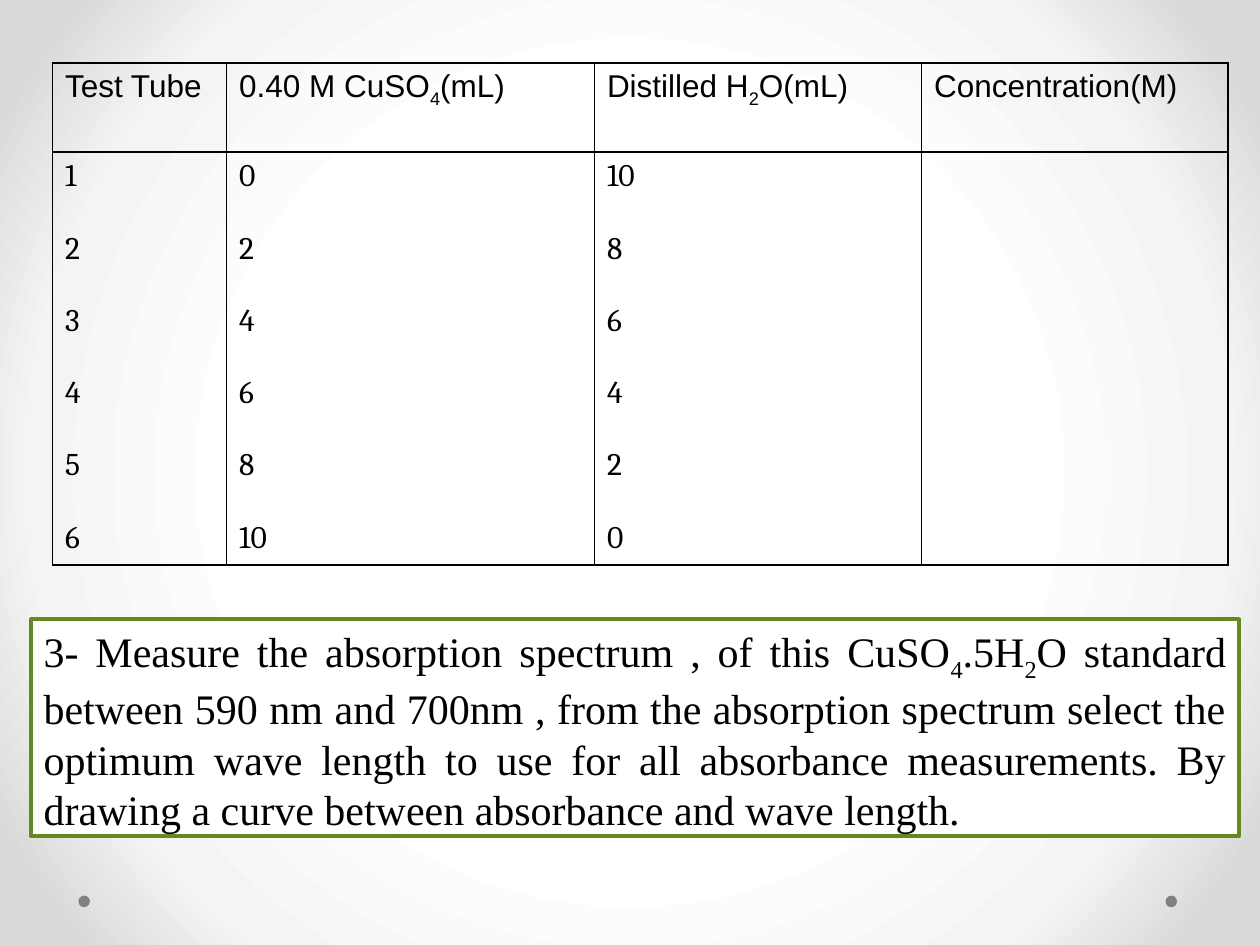
from lxml import etree
from pptx import Presentation
from pptx.dml.color import RGBColor
from pptx.enum.shapes import MSO_SHAPE
from pptx.enum.text import MSO_ANCHOR, PP_ALIGN
from pptx.oxml import parse_xml
from pptx.oxml.ns import nsdecls, qn
from pptx.util import Pt

RECTANGLE, OVAL = MSO_SHAPE.RECTANGLE, MSO_SHAPE.OVAL
JUSTIFY, LEFT = PP_ALIGN.JUSTIFY, PP_ALIGN.LEFT
TOP = MSO_ANCHOR.TOP
BLACK, WHITE, GREY, GREEN = "000000", "FFFFFF", "808080", "63891F"
BACKDROP = [(50, WHITE), (76, "F4F4F4"), (92, "DADADA")]
HEADINGS = [
    ["Test Tube"],
    ["0.40 M CuSO", "4", "(mL)"],
    ["Distilled H", "2", "O(mL)"],
    ["Concentration(M)"],
]
VOLUMES = range(0, 11, 2)
COLUMNS = [
    [[str(tube)] for tube in range(1, 7)],
    [[str(volume)] for volume in VOLUMES],
    [[str(10 - volume)] for volume in VOLUMES],
    [],
]
INSTRUCTION = [
    "3- Measure the absorption spectrum , of this CuSO", "4", ".5H", "2",
    "O standard between 590 nm and 700nm , from the absorption spectrum select "
    "the optimum wave length to use for all absorbance measurements. By drawing "
    "a curve between absorbance and wave length.",
]


def color(code):
    return RGBColor.from_string(code)


class SlideBuilder:
    """Hold the text style and the current slide, and add elements to it."""

    def __init__(self, page, ink=BLACK):
        self.page = page
        self.ink = ink

    def backdrop(self, stops):
        self.page.background.fill.gradient()
        gradient = next(self.page.element.iter(qn("a:gradFill")))
        for child in list(gradient):
            gradient.remove(child)
        marks = "".join(
            f'<a:gs pos="{place * 1000}"><a:srgbClr val="{code}"/></a:gs>'
            for place, code in stops)
        gradient.append(parse_xml(f'<a:gsLst {nsdecls("a")}>{marks}</a:gsLst>'))
        gradient.append(parse_xml(
            f'<a:path {nsdecls("a")} path="circle">'
            '<a:fillToRect l="50000" t="50000" r="50000" b="50000"/></a:path>'))

    def add_text(self, frame, lines, font, size, gap=0, align=LEFT):
        for index, runs in enumerate(lines):
            para = frame.add_paragraph() if index else frame.paragraphs[0]
            para.alignment = align
            if index:
                para.space_before = Pt(gap)
            for order, words in enumerate(runs):
                span = para.add_run()
                span.text = words
                span.font.name = font
                span.font.size = Pt(size)
                span.font.color.rgb = color(self.ink)
                if order % 2:
                    span.font._element.set("baseline", "-25000")

    def shape(self, kind, left, top, width, height, fill, line=None):
        box = self.page.shapes.add_shape(
            kind, Pt(left), Pt(top), Pt(width), Pt(height))
        box.shadow.inherit = False
        box.fill.solid()
        box.fill.fore_color.rgb = color(fill)
        if line:
            box.line.color.rgb = color(line)
            box.line.width = Pt(2.25)
        else:
            box.line.fill.background()
        return box

    def note(self, left, top, width, height, runs):
        box = self.shape(RECTANGLE, left, top, width, height, WHITE, GREEN)
        frame = box.text_frame
        frame.word_wrap = True
        frame.vertical_anchor = TOP
        self.add_text(frame, [runs], "Times New Roman", 24, align=JUSTIFY)

    def border(self, cell):
        properties = cell._tc.get_or_add_tcPr()
        for index, side in enumerate(("lnL", "lnR", "lnT", "lnB")):
            edge = etree.Element(qn(f"a:{side}"), w=str(Pt(1)))
            fill = etree.SubElement(edge, qn("a:solidFill"))
            etree.SubElement(fill, qn("a:srgbClr"), val=self.ink)
            properties.insert(index, edge)

    def table(self, left, top, widths, heights, rows):
        grid = self.page.shapes.add_table(
            len(heights), len(widths), Pt(left), Pt(top),
            Pt(sum(widths)), Pt(sum(heights))).table
        for column, width in zip(grid.columns, widths):
            column.width = Pt(width)
        for row, height, contents, font in zip(
                grid.rows, heights, rows, ("Arial", "Cambria")):
            row.height = Pt(height)
            for cell, lines in zip(row.cells, contents):
                cell.fill.background()
                self.border(cell)
                self.add_text(cell.text_frame, lines, font, 18, gap=20.5)


def main():
    deck = Presentation()
    deck.slide_width, deck.slide_height = Pt(720), Pt(540)
    builder = SlideBuilder(deck.slides.add_slide(deck.slide_layouts[6]))
    builder.backdrop(BACKDROP)
    for left in (666, 44.8):
        builder.shape(OVAL, left, 511.8, 6.6, 6.6, GREY)
    builder.table(30, 36, [99.5, 210.2, 187, 175], [51, 236],
                  [[[runs] for runs in HEADINGS], COLUMNS])
    builder.note(17.8, 354, 690, 124, INSTRUCTION)
    deck.save("out.pptx")


if __name__ == "__main__":
    main()
